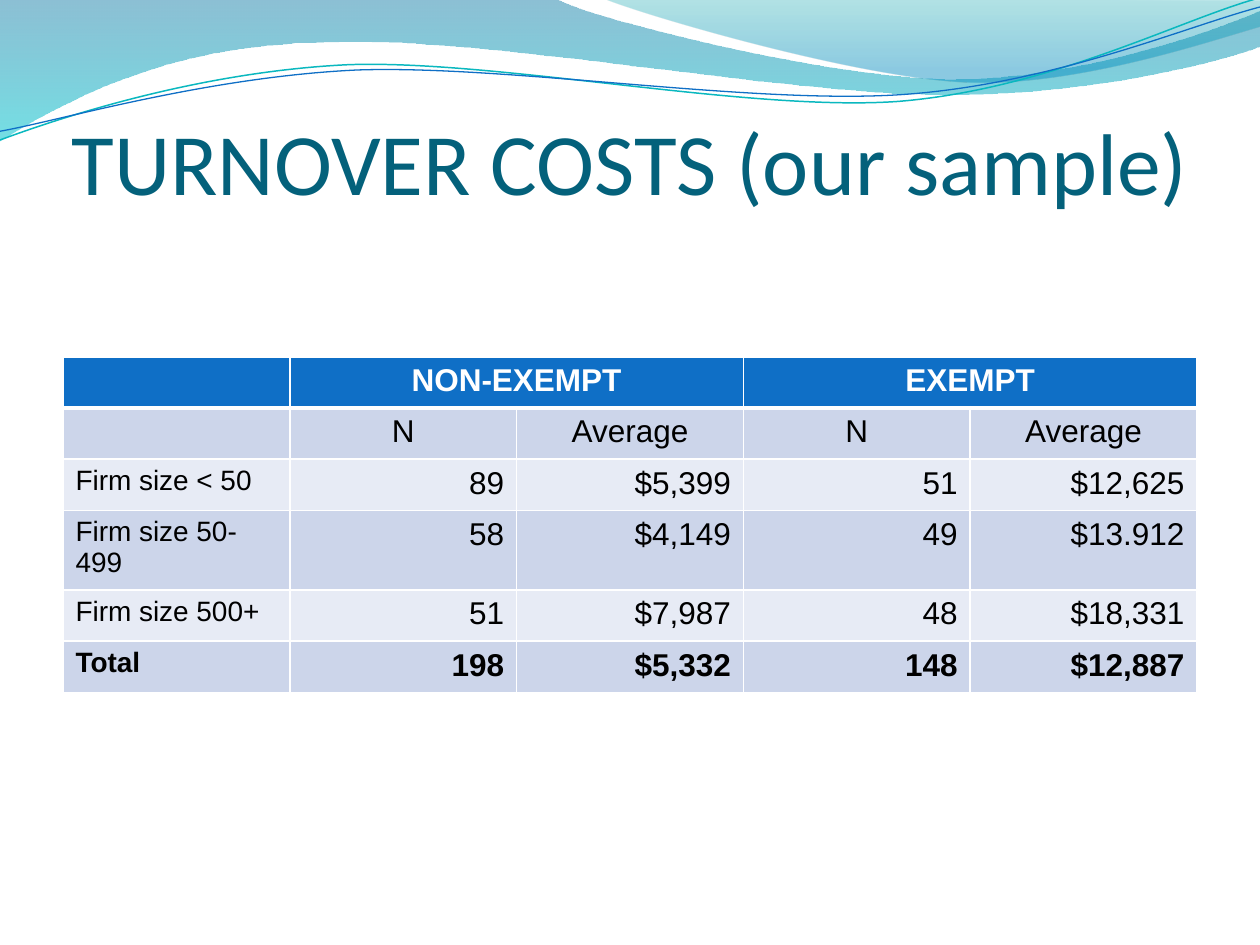
from lxml import etree
from pptx import Presentation
from pptx.dml.color import RGBColor
from pptx.enum import text as t
from pptx.oxml.ns import qn
from pptx.util import Pt

COLORS = {
    "white": "FFFFFF", "black": "000000", "title": "04617B", "header": "0F6FC6",
    "band_dark": "CCD5EA", "band_light": "E7EBF5", "teal_line": "0AB8BF",
    "deep_blue": "0074A1", "cyan": "00C6CF", "teal": "00A1A9", "sky": "008BBF",
}
LEFT, CENTER, RIGHT = t.PP_ALIGN.LEFT, t.PP_ALIGN.CENTER, t.PP_ALIGN.RIGHT

# Curves in points: pairs are straight steps, sextets are Bezier steps
LONG_WAVE = [(0, -1), (317, -1), (343, 12, 478, 45, 546, 45), (614, 45, 690, 19, 720, 6),
             (721, 26), (708, 32, 626, 55, 537, 54), (446, 54, 275, 20, 185, 24),
             (93, 25, 33, 60, -1, 81), (0, -1)]
SHORT_WAVE = [(345, -1), (366, 8, 491, 45, 554, 47), (616, 49, 692, 23, 720, 15),
              (720, 0), (345, -1)]
TEAL_CURVE = [(0, 80), (35, 67, 114, 41, 199, 37), (284, 34, 427, 64, 513, 58),
              (600, 51, 675, 11, 719, -1)]
BLUE_CURVE = [(0, 75), (34, 69, 118, 44, 204, 40), (290, 37, 430, 60, 516, 54),
              (602, 48, 678, 15, 720, 4)]

ROWS = [
    ["", "NON-EXEMPT", "", "EXEMPT", ""],
    ["", "N", "Average", "N", "Average"],
    ["Firm size < 50", "89", "$5,399", "51", "$12,625"],
    ["Firm size 50-499", "58", "$4,149", "49", "$13.912"],
    ["Firm size 500+", "51", "$7,987", "48", "$18,331"],
    ["Total", "198", "$5,332", "148", "$12,887"],
]


def rgb(name):
    return RGBColor.from_string(COLORS[name])


def write(frame, content, size=18, font="Arial", color="black", bold=False, align=LEFT):
    paragraph = frame.paragraphs[0]
    paragraph.alignment = align
    run = paragraph.add_run()
    run.text = content
    run.font.size, run.font.name, run.font.bold = Pt(size), font, bold
    run.font.color.rgb = rgb(color)
    # The paragraph mark takes the run's size, so it does not stretch the line
    etree.SubElement(paragraph._p, qn("a:endParaRPr"), sz=str(size * 100))


def add_curve(slide, left, top, steps, close):
    points = [(Pt(left + step[i]), Pt(top + step[i + 1]))
              for step in steps for i in range(0, len(step), 2)]
    builder = slide.shapes.build_freeform(*points[0])
    builder.add_line_segments(points[1:], close=close)
    curve = builder.convert_to_shape()
    curve.shadow.inherit = False
    # Join each three steps of a sextet into one Bezier step
    lines = iter(list(curve.element.spPr.iter(qn("a:lnTo"))))
    for step in steps[1:]:
        first = next(lines)
        if len(step) == 6:
            first.tag = qn("a:cubicBezTo")
            for _ in range(2):
                follower = next(lines)
                first.append(follower[0])
                follower.getparent().remove(follower)
    return curve


def add_waves(slide, left, top):
    # Translucent bands: (colour, position, opacity in percent) per stop
    bands = [(LONG_WAVE, (("deep_blue", 0, 45), ("cyan", 1, 55))),
             (SHORT_WAVE, (("teal", 0, 30), ("sky", 0.8, 45)))]
    for steps, stops in bands:
        band = add_curve(slide, left, top, steps, close=True)
        band.line.fill.background()
        band.fill.gradient()
        band.fill.gradient_angle = 270
        for stop, (color, position, _) in zip(band.fill.gradient_stops, stops):
            stop.color.rgb = rgb(color)
            stop.position = position
        for node, (_, _, opacity) in zip(band.element.spPr.iter(qn("a:srgbClr")), stops):
            etree.SubElement(node, qn("a:alpha"), val=str(opacity * 1000))
    # Thin lines
    for steps, color, width in [(TEAL_CURVE, "teal_line", 0.85), (BLUE_CURVE, "header", 0.75)]:
        line = add_curve(slide, left, top, steps, close=False)
        line.fill.background()
        line.line.color.rgb = rgb(color)
        line.line.width = Pt(width)


def add_title(slide, left, top, width, height):
    frame = slide.shapes.add_textbox(Pt(left), Pt(top), Pt(width), Pt(height)).text_frame
    frame.word_wrap = True
    frame.vertical_anchor = t.MSO_ANCHOR.BOTTOM
    frame.margin_left = frame.margin_right = 0
    frame.margin_bottom = Pt(23.6)
    write(frame, "TURNOVER COSTS (our sample)", size=50, font="Calibri",
          color="title", align=CENTER)


def add_borders(cell, bottom):
    properties = cell._tc.get_or_add_tcPr()
    for i, (side, width) in enumerate([("L", 1), ("R", 1), ("T", 1), ("B", bottom)]):
        border = etree.Element(qn(f"a:ln{side}"), w=str(Pt(width)))
        fill = etree.SubElement(border, qn("a:solidFill"))
        etree.SubElement(fill, qn("a:srgbClr"), val=COLORS["white"])
        properties.insert(i, border)


def add_cost_table(slide, left, top, width, height):
    columns = len(ROWS[0])
    table = slide.shapes.add_table(len(ROWS), columns, Pt(left), Pt(top),
                                   Pt(width), Pt(height)).table
    for column in (1, 3):
        table.cell(0, column).merge(table.cell(0, column + 1))
    for r, row in enumerate(ROWS):
        header, total = r == 0, r == len(ROWS) - 1
        fill = "header" if header else "band_dark" if r % 2 else "band_light"
        for c, content in enumerate(row):
            cell = table.cell(r, c)
            cell.fill.solid()
            cell.fill.fore_color.rgb = rgb(fill)
            add_borders(cell, bottom=3 if header else 1)
            if content:
                write(cell.text_frame, content, size=18 if c else 16,
                      color="white" if header else "black", bold=header or total,
                      align=CENTER if r < 2 else RIGHT if c else LEFT)


def main():
    deck = Presentation()
    deck.slide_width, deck.slide_height = Pt(720), Pt(540)
    slide = deck.slides.add_slide(deck.slide_layouts[6])
    add_waves(slide, 0, 0)
    add_title(slide, 36, 55.5, 648, 90)
    add_cost_table(slide, 36, 204, 648, 175.2)
    deck.save("out.pptx")


if __name__ == "__main__":
    main()
